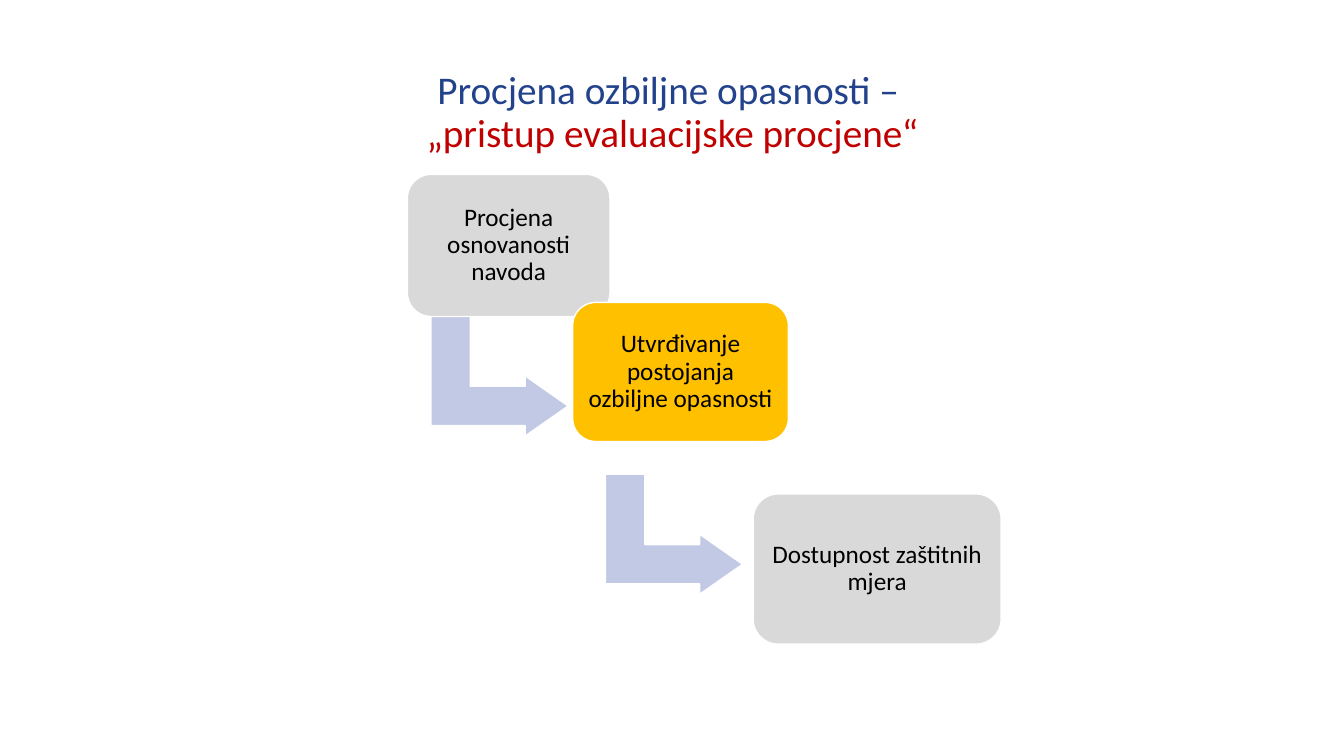
from pptx import Presentation
from pptx.dml.color import RGBColor
from pptx.enum.shapes import MSO_SHAPE
from pptx.enum.text import MSO_ANCHOR, PP_ALIGN
from pptx.util import Inches, Pt

TITLE_BOX = (0.92, 0.4, 11.5, 1.45)
DIAGRAM_BOX = (4.04, 1.73, 5.89, 4.66)
ARROW_SIZE = (1.19, 1.36)
TITLE_LINES = [
    ("Procjena ozbiljne opasnosti – ", "22428C"),
    ("„pristup evaluacijske procjene“", "C00000"),
]
STEPS = [
    ("Procjena osnovanosti navoda", "D9D9D9", (0, 0, 2.01, 1.41), (0.32, 1.32)),
    ("Utvrđivanje postojanja ozbiljne opasnosti", "FFC000", (1.64, 1.27, 2.14, 1.38), (2.05, 2.89)),
    ("Dostupnost zaštitnih mjera", "D9D9D9", (3.43, 3.17, 2.46, 1.49), None),
]
FRAME_FORMAT = {"word_wrap": True, "vertical_anchor": MSO_ANCHOR.MIDDLE}
INSETS = {f"margin_{side}": Inches(0.07) for side in ("left", "top", "right", "bottom")}
PARAGRAPH_FORMAT = {"alignment": PP_ALIGN.CENTER, "line_spacing": 0.9}


def color(hex_value):
    """Turn a hex string into a colour."""
    return RGBColor.from_string(hex_value)


def apply_format(target, values):
    """Set each named format value on the target."""
    for name, value in values.items():
        setattr(target, name, value)


def write_lines(frame, lines, size):
    """Write coloured, centred lines as one paragraph."""
    apply_format(frame, FRAME_FORMAT)
    paragraph = frame.paragraphs[0]
    apply_format(paragraph, PARAGRAPH_FORMAT)
    for index, (text, hex_value) in enumerate(lines):
        if index:
            paragraph.add_line_break()
        run = paragraph.add_run()
        run.text = text
        apply_format(run.font, {"name": "Calibri", "size": Pt(size)})
        run.font.color.rgb = color(hex_value)


def add_block(slide, preset, box, fill, adjustments):
    """Add a filled preset shape with a thin white outline."""
    block = slide.shapes.add_shape(preset, *map(Inches, box))
    block.shadow.inherit = False
    block.fill.solid()
    block.fill.fore_color.rgb = color(fill)
    block.line.color.rgb = color("FFFFFF")
    block.line.width = Pt(1)
    for index, value in enumerate(adjustments):
        block.adjustments[index] = value
    return block


def add_title(slide, box):
    """Place the two-colour title in its box."""
    title = slide.shapes.add_textbox(*map(Inches, box))
    write_lines(title.text_frame, TITLE_LINES, 28)


def add_staircase(slide, box):
    """Place the descending steps and their arrows inside the box."""
    left, top = box[:2]
    for text, fill, (x, y, width, height), arrow_offset in STEPS:
        if arrow_offset:
            arrow_box = (left + arrow_offset[0], top + arrow_offset[1], *ARROW_SIZE)
            arrow = add_block(slide, MSO_SHAPE.BENT_UP_ARROW, arrow_box, "C1C9E4", (0.328, 0.25, 0.358))
            arrow.rotation = 90
        step_box = (left + x, top + y, width, height)
        step = add_block(slide, MSO_SHAPE.ROUNDED_RECTANGLE, step_box, fill, (0.167,))
        apply_format(step.text_frame, INSETS)
        write_lines(step.text_frame, [(text, "000000")], 18)


def main():
    """Build the slide and save it."""
    presentation = Presentation()
    apply_format(presentation, {"slide_width": Inches(13.33), "slide_height": Inches(7.5)})
    slide = presentation.slides.add_slide(presentation.slide_layouts[6])
    add_title(slide, TITLE_BOX)
    add_staircase(slide, DIAGRAM_BOX)
    presentation.save("out.pptx")


if __name__ == "__main__":
    main()
